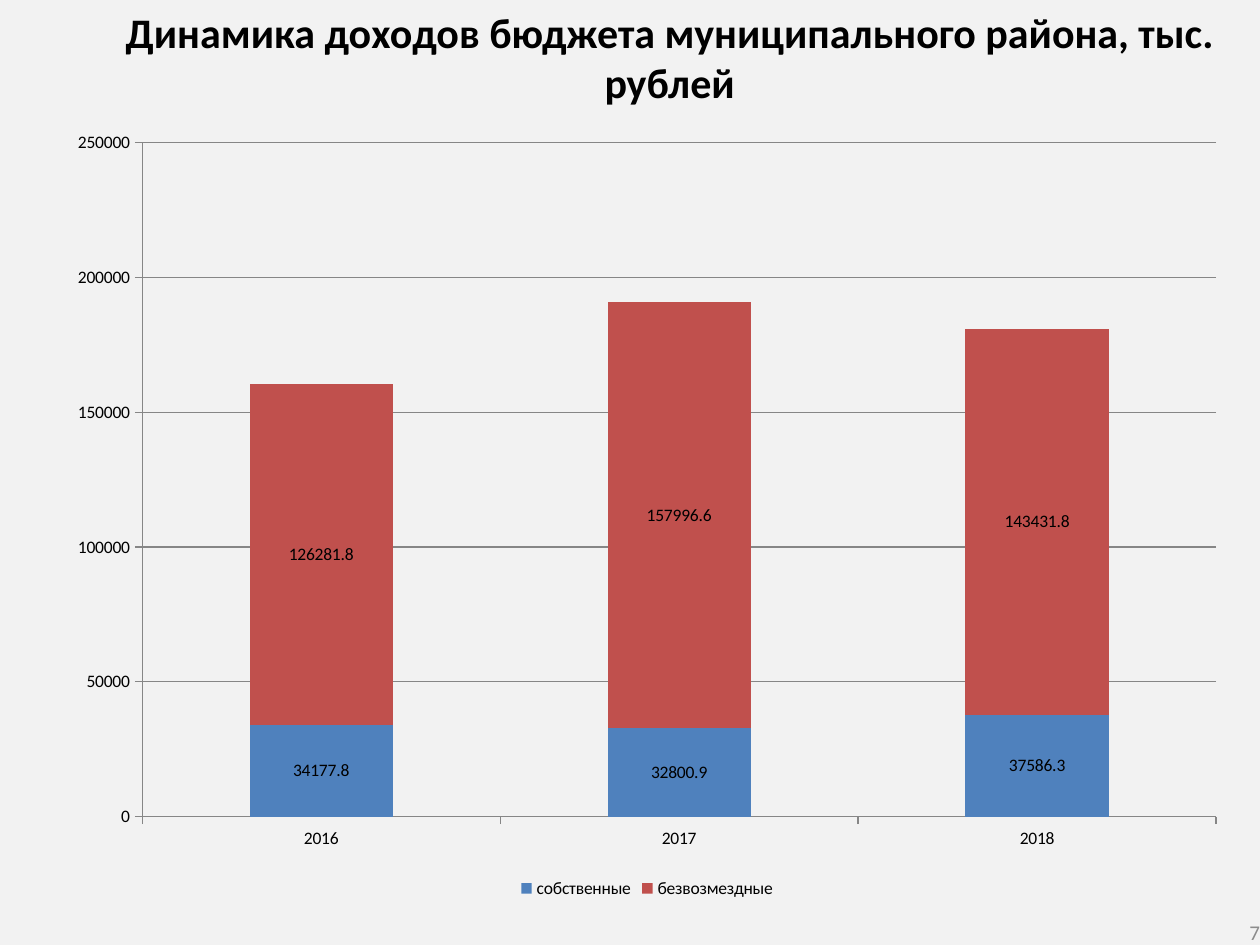
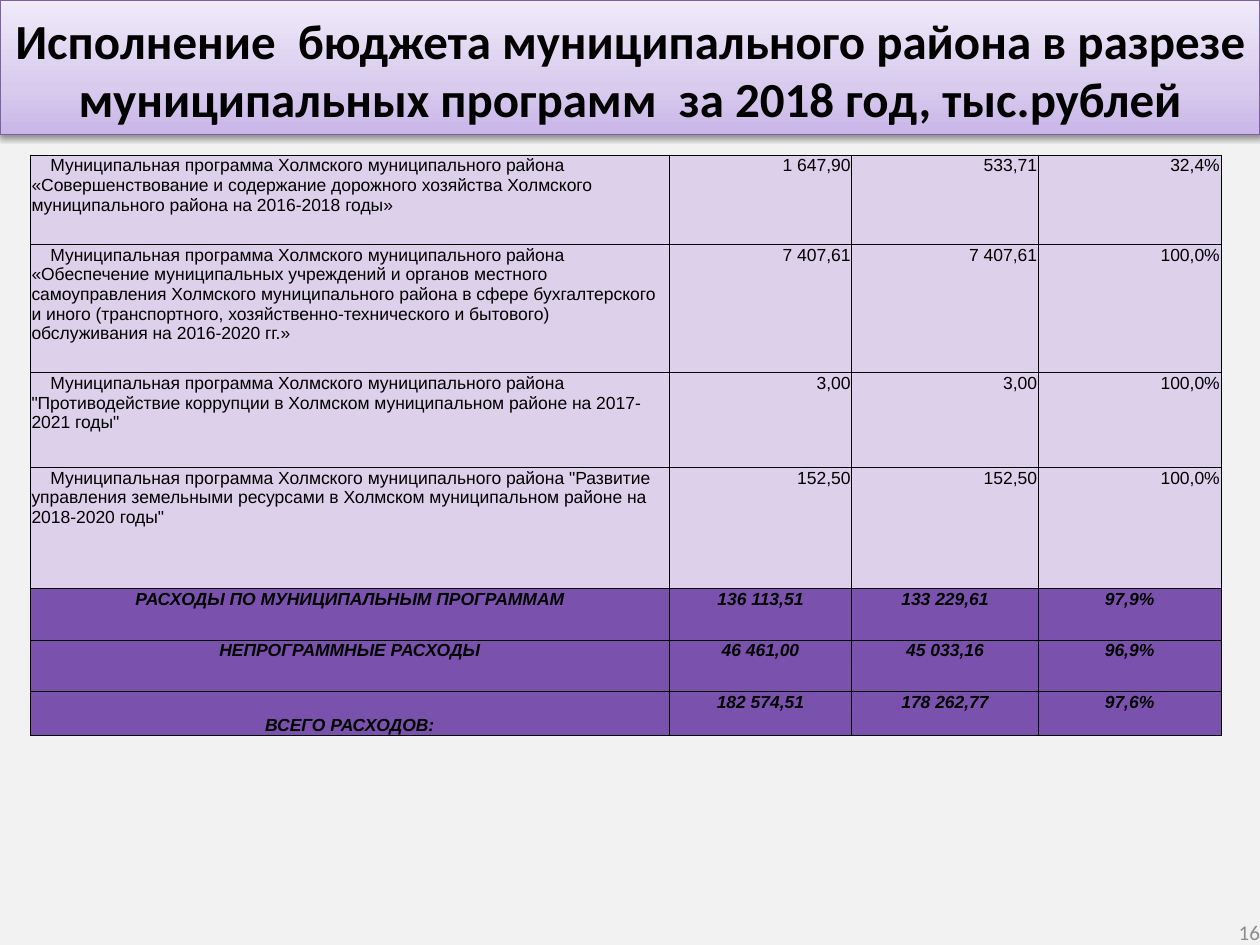
from lxml import etree
from pptx import Presentation
from pptx.chart.data import CategoryChartData
from pptx.dml.color import RGBColor
from pptx.enum.chart import XL_CHART_TYPE, XL_LEGEND_POSITION, XL_TICK_MARK
from pptx.enum.text import MSO_ANCHOR, MSO_AUTO_SIZE, PP_ALIGN
from pptx.oxml import parse_xml
from pptx.oxml.ns import nsdecls, qn
from pptx.util import Inches, Pt

# Shared colours and text formats
BLACK = RGBColor(0x00, 0x00, 0x00)
GREY = RGBColor(0x8C, 0x8C, 0x8C)
AXIS = RGBColor(0x86, 0x86, 0x86)
PAPER = RGBColor(0xF2, 0xF2, 0xF2)
BLUE = RGBColor(0x4F, 0x81, 0xBD)
RED = RGBColor(0xC0, 0x50, 0x4D)
LILAC = RGBColor(0xDC, 0xD0, 0xEA)
VIOLET = RGBColor(0x7B, 0x51, 0xAE)
EDGE = RGBColor(0x7D, 0x60, 0xA0)
BAND = [(0, RGBColor(0xC9, 0xB5, 0xE8)), (35, RGBColor(0xD8, 0xCB, 0xEE)),
        (100, RGBColor(0xF0, 0xEA, 0xF9))]

HEAD = dict(name="Calibri", bold=True)
PAGE = dict(name="Calibri", size=Pt(12))
CELL = dict(name="Arial", size=Pt(10))
TOTAL = dict(CELL, bold=True, italic=True)
MARGINS = ("margin_left", "margin_top", "margin_right", "margin_bottom")

# Income slide
INCOME = "Динамика доходов бюджета муниципального района, тыс. рублей"
YEARS = ["2016", "2017", "2018"]
SERIES = [
    ("собственные", (34177.8, 32800.9, 37586.3), BLUE),
    ("безвозмездные", (126281.8, 157996.6, 143431.8), RED),
]

# Programme slide
SPENDING = ("Исполнение  бюджета муниципального района в разрезе "
            "муниципальных программ  за 2018 год, тыс.рублей")
LEAD = "Муниципальная программа Холмского муниципального района "
PLANS = [
    (LEAD + "«Совершенствование и содержание дорожного хозяйства Холмского "
     "муниципального района на 2016-2018 годы»", "1 647,90", "533,71", "32,4%"),
    (LEAD + "«Обеспечение муниципальных учреждений и органов местного "
     "самоуправления Холмского муниципального района в сфере бухгалтерского "
     "и иного (транспортного, хозяйственно-технического и бытового) "
     "обслуживания на 2016-2020 гг.»", "7 407,61", "7 407,61", "100,0%"),
    (LEAD + '"Противодействие коррупции в Холмском муниципальном районе '
     'на 2017-2021 годы"', "3,00", "3,00", "100,0%"),
    (LEAD + '"Развитие управления земельными ресурсами в Холмском '
     'муниципальном районе на 2018-2020 годы"', "152,50", "152,50", "100,0%"),
]
SUMS = [
    ("РАСХОДЫ ПО МУНИЦИПАЛЬНЫМ ПРОГРАММАМ", "136 113,51", "133 229,61", "97,9%"),
    ("НЕПРОГРАММНЫЕ РАСХОДЫ", "46 461,00", "45 033,16", "96,9%"),
    ("ВСЕГО РАСХОДОВ:", "182 574,51", "178 262,77", "97,6%"),
]
WIDTHS = [5.07, 1.45, 1.48, 1.45]
HEIGHTS = [0.71, 1.02, 0.75, 0.96, 0.41, 0.41, 0.35]


def style(font, form, color=BLACK):
    for key, value in form.items():
        setattr(font, key, value)
    font.color.rgb = color


def pad(frame, *sizes):
    for side, size in zip(MARGINS, sizes):
        setattr(frame, side, Inches(size))


def write(para, text, form, align, color=BLACK):
    run = para.add_run()
    run.text = text
    para.alignment = align
    style(run.font, form, color)


def place(shape, box):
    shape.left, shape.top, shape.width, shape.height = map(Inches, box)


def add_page(deck, title, box, size, top, number):
    """Add a slide with its title and page number."""
    slide = deck.slides.add_slide(deck.slide_layouts[5])
    head = slide.shapes.title
    place(head, box)
    frame = head.text_frame
    frame.auto_size = MSO_AUTO_SIZE.NONE
    frame.vertical_anchor = MSO_ANCHOR.TOP
    pad(frame, 0.1, top, 0.1, 0.05)
    write(frame.paragraphs[0], title, dict(HEAD, size=Pt(size)), PP_ALIGN.CENTER)

    foot = slide.shapes.add_textbox(*map(Inches, (7.67, 7.29, 2.33, 0.21)))
    frame = foot.text_frame
    frame.word_wrap = True
    frame.vertical_anchor = MSO_ANCHOR.MIDDLE
    pad(frame, 0, 0, 0, 0)
    write(frame.paragraphs[0], number, PAGE, PP_ALIGN.RIGHT, GREY)
    return slide


def add_band(head):
    """Give the title a gradient, an outline and a soft shadow."""
    stops = "".join(f'<a:gs pos="{pos * 1000}"><a:srgbClr val="{color}"/></a:gs>'
                    for pos, color in BAND)
    props = head._element.spPr
    props.append(parse_xml(
        f'<a:gradFill {nsdecls("a")} rotWithShape="1"><a:gsLst>{stops}</a:gsLst>'
        '<a:lin ang="16200000" scaled="1"/></a:gradFill>'))
    head.line.color.rgb = EDGE
    head.line.width = Pt(0.75)
    props.append(parse_xml(
        f'<a:effectLst {nsdecls("a")}><a:outerShdw blurRad="{Pt(3.1)}" '
        f'dist="{Pt(1.6)}" dir="5400000" rotWithShape="0"><a:srgbClr val="000000">'
        '<a:alpha val="38000"/></a:srgbClr></a:outerShdw></a:effectLst>'))


def add_bars(slide):
    data = CategoryChartData()
    data.categories = YEARS
    for name, values, _ in SERIES:
        data.add_series(name, values)
    chart = slide.shapes.add_chart(
        XL_CHART_TYPE.COLUMN_STACKED,
        *map(Inches, (0.43, 0.93, 9.41, 6.24)), data).chart
    style(chart.font, dict(name="Calibri", size=Pt(10)))
    chart.has_title = False
    chart.has_legend = True
    chart.legend.position = XL_LEGEND_POSITION.BOTTOM
    chart.legend.include_in_layout = False

    plot = chart.plots[0]
    plot.gap_width, plot.overlap = 150, 100
    plot.vary_by_categories = False
    for bar, (_, _, color) in zip(plot.series, SERIES):
        bar.format.fill.solid()
        bar.format.fill.fore_color.rgb = color
        bar.data_labels.show_value = True

    scale = chart.value_axis
    scale.minimum_scale, scale.maximum_scale, scale.major_unit = 0, 250000, 50000
    scale.has_major_gridlines = True
    for axis in (chart.category_axis, scale):
        axis.major_tick_mark = XL_TICK_MARK.OUTSIDE
    for part in (chart.category_axis, scale, scale.major_gridlines):
        part.format.line.color.rgb = AXIS
        part.format.line.width = Pt(0.75)


def add_border(cell):
    props = cell._tc.get_or_add_tcPr()
    for side in ("lnL", "lnR", "lnT", "lnB"):
        line = etree.SubElement(props, qn("a:" + side), w=str(Pt(0.5)))
        fill = etree.SubElement(line, qn("a:solidFill"))
        etree.SubElement(fill, qn("a:srgbClr"), val=str(BLACK))


def add_grid(slide):
    rows = PLANS + SUMS
    table = slide.shapes.add_table(
        len(rows), len(WIDTHS), Inches(0.24), Inches(1.23),
        Inches(sum(WIDTHS)), Inches(sum(HEIGHTS))).table
    table.first_row = table.horz_banding = False
    for col, width in zip(table.columns, WIDTHS):
        col.width = Inches(width)
    for r, (row, height) in enumerate(zip(rows, HEIGHTS)):
        table.rows[r].height = Inches(height)
        total = r >= len(PLANS)
        for c, text in enumerate(row):
            cell = table.cell(r, c)
            para = cell.text_frame.paragraphs[0]
            if total:
                align = PP_ALIGN.CENTER
            else:
                align = PP_ALIGN.RIGHT if c else PP_ALIGN.LEFT
            write(para, text, TOTAL if total else CELL, align)
            if not total and c == 0:
                para._p.get_or_add_pPr().set("indent", str(Inches(0.15)))
            pad(cell, 0.01, 0.01, 0.01, 0)
            add_border(cell)
            cell.fill.solid()
            cell.fill.fore_color.rgb = VIOLET if total else LILAC
    table.cell(len(rows) - 1, 0).vertical_anchor = MSO_ANCHOR.BOTTOM


def main():
    deck = Presentation()
    deck.slide_width, deck.slide_height = Inches(10), Inches(7.5)
    back = deck.slide_master.background.fill
    back.solid()
    back.fore_color.rgb = PAPER

    # Income by year
    slide = add_page(deck, INCOME, (0.87, 0, 8.89, 0.93), 24, 0.05, "7")
    add_bars(slide)

    # Spending by programme
    slide = add_page(deck, SPENDING, (0, 0, 10, 1.07), 28, 0.08, "16")
    add_band(slide.shapes.title)
    add_grid(slide)

    deck.save("out.pptx")


if __name__ == "__main__":
    main()
